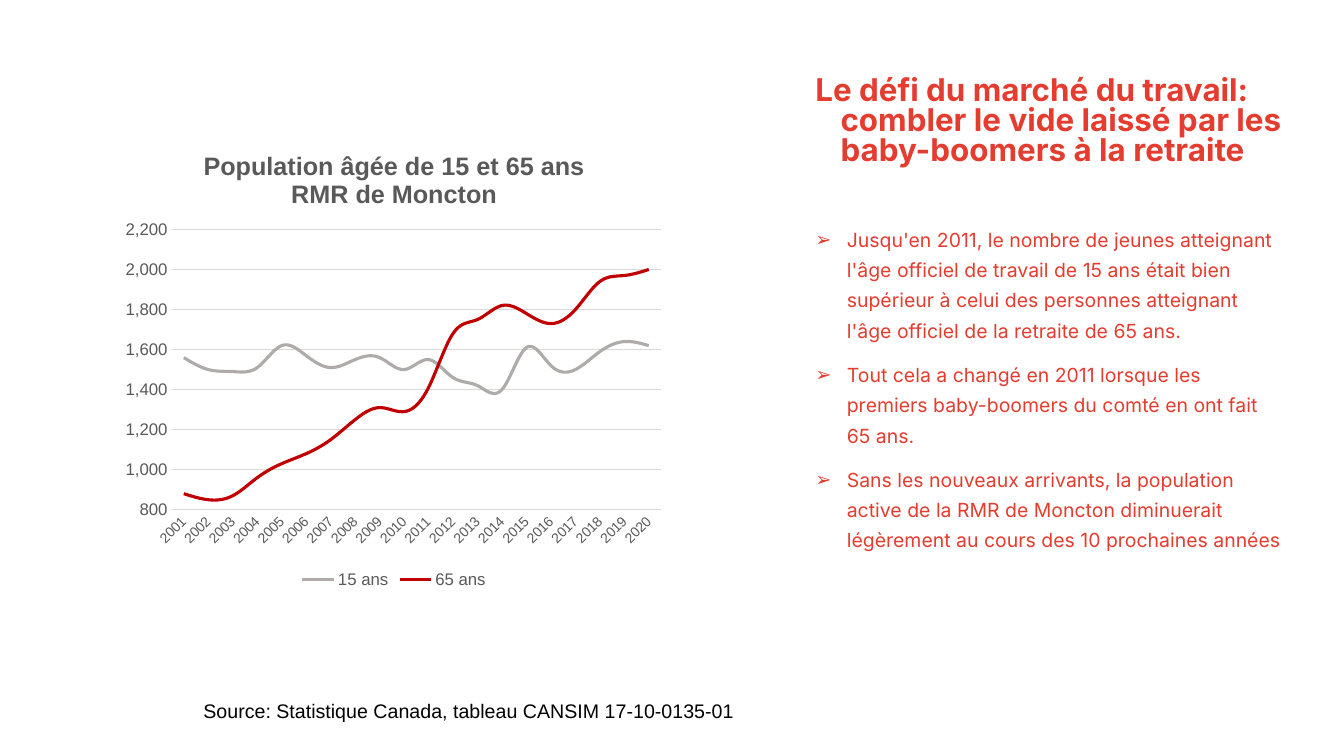
from lxml import etree
from pptx import Presentation
from pptx.chart.data import CategoryChartData
from pptx.dml.color import RGBColor
from pptx.enum import chart as ch, text as tx
from pptx.oxml import parse_xml
from pptx.oxml.ns import nsdecls, qn
from pptx.util import Pt

HUES = {"red": "E43D30", "grey": "595959", "grid": "D9D9D9",
        "young": "AFABAB", "old": "C00000", "black": "000000"}


def style(font, size, hue, face="Arial", bold=False):
    font.name, font.size, font.bold = face, Pt(size), bold
    font.color.rgb = RGBColor.from_string(HUES[hue])


def add_box(left, top, width, height):
    frame = slide.shapes.add_textbox(Pt(left), Pt(top), Pt(width), Pt(height)).text_frame
    frame.word_wrap = True
    return frame


deck = Presentation()
deck.slide_width, deck.slide_height = Pt(960), Pt(540)
slide = deck.slides.add_slide(deck.slide_layouts[6])

# Heading with a hanging indent
para = add_box(557.3, 51.8, 366.5, 93.6).paragraphs[0]
para.line_spacing = 0.8
props = para._p.get_or_add_pPr()
props.set("marL", str(Pt(36)))
props.set("indent", str(Pt(-18)))
run = para.add_run()
run.text = "Le défi du marché du travail: combler le vide laissé par les baby-boomers à la retraite"
style(run.font, 22.4, "red", "Inter", True)

# Arrow bullets
points = [
    "Jusqu'en 2011, le nombre de jeunes atteignant l'âge officiel de travail de 15 ans "
    "était bien supérieur à celui des personnes atteignant l'âge officiel de la retraite de 65 ans.",
    "Tout cela a changé en 2011 lorsque les premiers baby-boomers du comté en ont fait 65 ans.",
    "Sans les nouveaux arrivants, la population active de la RMR de Moncton diminuerait "
    "légèrement au cours des 10 prochaines années",
]
frame = add_box(557.3, 154.1, 366.5, 311.8)
for i, point in enumerate(points):
    para = frame.add_paragraph() if i else frame.paragraphs[0]
    para.line_spacing = 1.3
    para.space_before = Pt(10 if i else 0)
    props = para._p.get_or_add_pPr()
    props.set("marL", str(Pt(40.5)))
    props.set("indent", str(Pt(-22.5)))
    tint = etree.SubElement(props, qn("a:buClr"))
    etree.SubElement(tint, qn("a:srgbClr")).set("val", HUES["red"])
    etree.SubElement(props, qn("a:buFont")).set("typeface", "Arial")
    etree.SubElement(props, qn("a:buChar")).set("char", "➢")
    run = para.add_run()
    run.text = point
    style(run.font, 13.9, "red", "Inter")

# Source line
frame = add_box(138.2, 495.4, 673.9, 24.5)
frame.auto_size = tx.MSO_AUTO_SIZE.SHAPE_TO_FIT_TEXT
run = frame.paragraphs[0].add_run()
run.text = "Source: Statistique Canada, tableau CANSIM 17-10-0135-01"
style(run.font, 14, "black")

# Chart values
data = CategoryChartData(number_format="#,##0")
data.categories = [str(year) for year in range(2001, 2021)]
data.add_series("15 ans", [1560, 1500, 1490, 1510, 1620, 1570, 1510, 1550, 1560, 1500,
                           1550, 1460, 1420, 1400, 1610, 1520, 1500, 1590, 1640, 1620])
data.add_series("65 ans", [880, 850, 870, 960, 1030, 1080, 1150, 1250, 1310, 1290,
                           1410, 1680, 1750, 1820, 1780, 1730, 1800, 1940, 1970, 2000])
chart = slide.shapes.add_chart(ch.XL_CHART_TYPE.LINE, Pt(82.8), Pt(95), Pt(397.4),
                               Pt(328.3), data).chart
style(chart.font, 10, "black")

# Chart title
frame = chart.chart_title.text_frame
for i, line in enumerate(["Population âgée de 15 et 65 ans", "RMR de Moncton"]):
    para = frame.add_paragraph() if i else frame.paragraphs[0]
    run = para.add_run()
    run.text = line
    style(run.font, 18, "grey", bold=True)
chart.chart_title.include_in_layout = False

# Lines
for plot_line, hue in zip(chart.plots[0].series, ["young", "old"]):
    plot_line.smooth = True
    plot_line.marker.style = ch.XL_MARKER_STYLE.NONE
    plot_line.format.line.width = Pt(2.25)
    plot_line.format.line.color.rgb = RGBColor.from_string(HUES[hue])

# Axes and grid
years, count = chart.category_axis, chart.value_axis
for axis, size in [(years, 10), (count, 12)]:
    axis.major_tick_mark = axis.minor_tick_mark = ch.XL_TICK_MARK.NONE
    style(axis.tick_labels.font, size, "grey")
years._element.find(qn("c:txPr")).find(qn("a:bodyPr")).set("rot", "-2700000")
count.minimum_scale, count.maximum_scale, count.major_unit = 800, 2200, 200
count.tick_labels.number_format = "#,##0"
count.tick_labels.number_format_is_linked = False
count.format.line.fill.background()
for rule in [years.format.line, count.major_gridlines.format.line]:
    rule.width = Pt(0.75)
    rule.color.rgb = RGBColor.from_string(HUES["grid"])

# Legend
chart.has_legend = True
chart.legend.position = ch.XL_LEGEND_POSITION.BOTTOM
chart.legend.include_in_layout = False
style(chart.legend.font, 12, "grey")

# Plot area, as shares of the chart
area = chart._chartSpace.chart.plotArea
for old in area.findall(qn("c:layout")):
    area.remove(old)
shares = {"x": 0.1, "y": 0.21, "w": 0.88, "h": 0.61}
marks = '<c:layoutTarget val="inner"/><c:xMode val="edge"/><c:yMode val="edge"/>'
marks += "".join(f'<c:{key} val="{share}"/>' for key, share in shares.items())
area.insert(0, parse_xml(f'<c:layout {nsdecls("c")}><c:manualLayout>{marks}'
                         "</c:manualLayout></c:layout>"))

deck.save("out.pptx")
